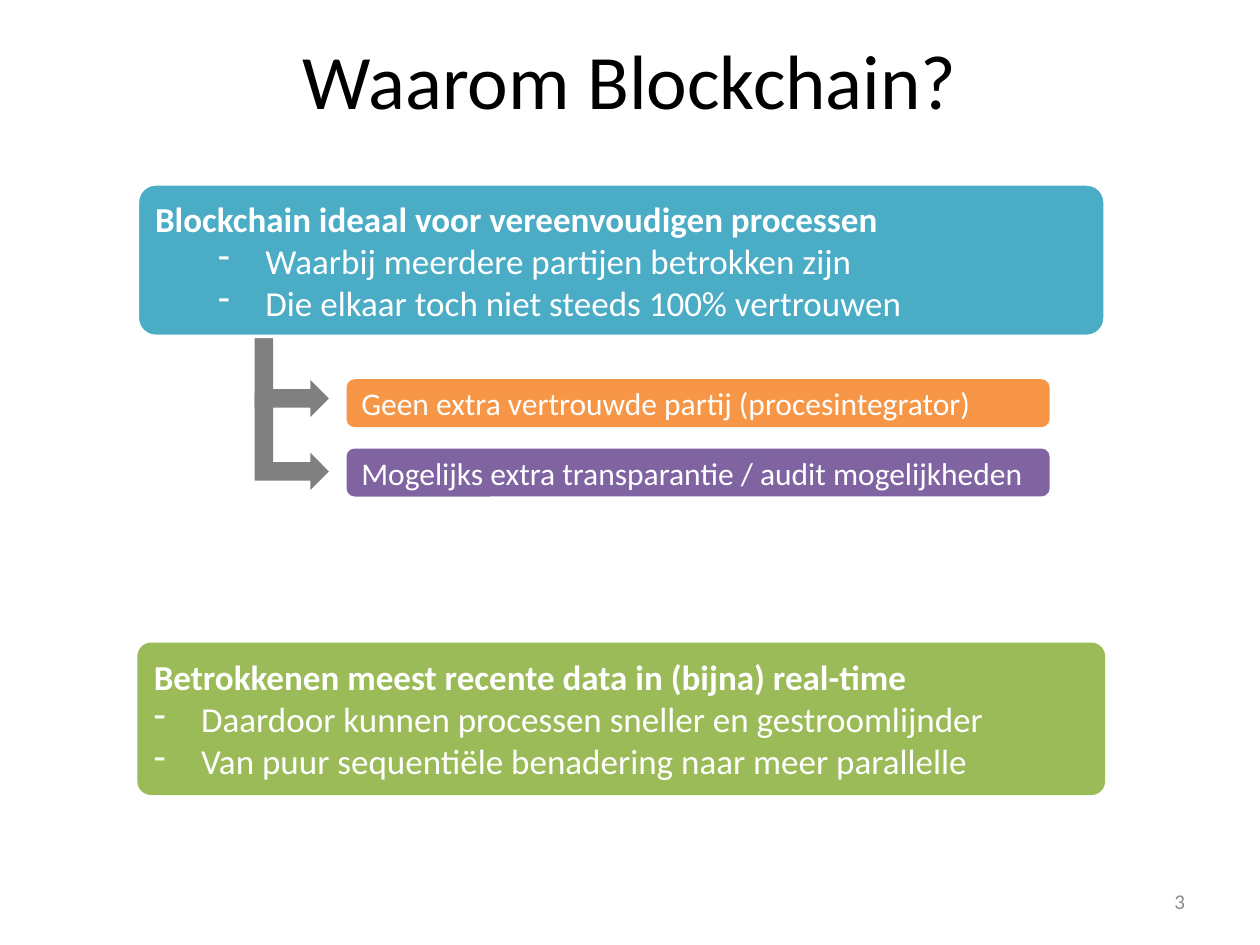
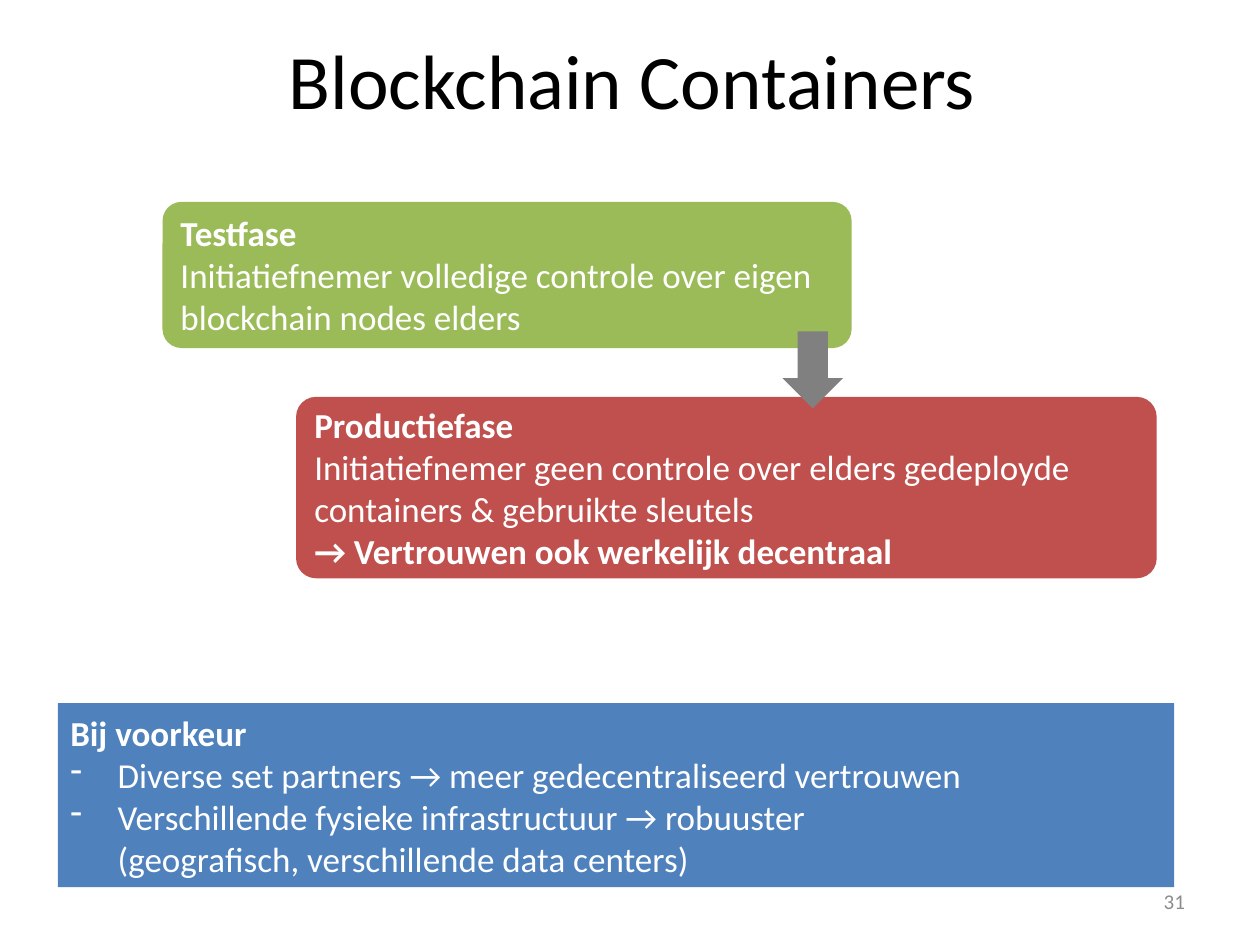
"""Build two slides on why and how to use blockchain."""
from dataclasses import dataclass

from lxml import etree
from pptx import Presentation
from pptx.dml.color import RGBColor
from pptx.enum.shapes import MSO_SHAPE
from pptx.enum.text import MSO_ANCHOR, PP_ALIGN
from pptx.oxml.ns import qn
from pptx.util import Pt

ROUNDED = MSO_SHAPE.ROUNDED_RECTANGLE
RECTANGLE = MSO_SHAPE.RECTANGLE
BENT_ARROW = MSO_SHAPE.BENT_UP_ARROW
DOWN_ARROW = MSO_SHAPE.DOWN_ARROW
MIDDLE = MSO_ANCHOR.MIDDLE
LEFT, CENTER, RIGHT = PP_ALIGN.LEFT, PP_ALIGN.CENTER, PP_ALIGN.RIGHT
TITLE_ONLY = 5


@dataclass(frozen=True)
class Theme:
    """Colours, font and type sizes shared by the slides."""

    font: str = "Calibri"
    black: str = "000000"
    white: str = "FFFFFF"
    number_gray: str = "8C8C8C"
    arrow_gray: str = "808080"
    teal: str = "4BACC6"
    orange: str = "F79646"
    purple: str = "8064A2"
    green: str = "9BBB59"
    red: str = "C0504D"
    blue: str = "4F81BD"
    title_size: int = 44
    box_size: int = 20
    bar_size: int = 18
    number_size: int = 12
    bullet_hang: int = 27


THEME = Theme()


@dataclass(frozen=True)
class Line:
    """A paragraph; a bullet also has a left margin in points."""

    text: str
    bold: bool = False
    bullet_margin: int = 0


def points(*lengths):
    """Turn plain numbers into point lengths."""
    return [Pt(length) for length in lengths]


def format_run(run, size, color, bold=False):
    """Set the font of one run."""
    run.font.name = THEME.font
    run.font.size = Pt(size)
    run.font.bold = bold
    run.font.color.rgb = RGBColor.from_string(color)


def add_bullet(paragraph, margin):
    """Give a paragraph a hanging dash."""
    properties = paragraph._p.get_or_add_pPr()
    properties.set("marL", str(Pt(margin)))
    properties.set("indent", str(-Pt(THEME.bullet_hang)))
    etree.SubElement(properties, qn("a:buFontTx"))
    etree.SubElement(properties, qn("a:buChar")).set("char", "-")


def write_lines(shape, lines, size, color, alignment=LEFT):
    """Fill a shape with formatted paragraphs, centred vertically."""
    frame = shape.text_frame
    frame.word_wrap = True
    frame.vertical_anchor = MIDDLE
    frame.text = "\n".join("" for line in lines)
    for paragraph, line in zip(frame.paragraphs, lines):
        paragraph.text = line.text
        paragraph.alignment = alignment
        if line.bullet_margin:
            add_bullet(paragraph, line.bullet_margin)
        for run in paragraph.runs:
            format_run(run, size, color, line.bold)


def add_titled_slide(presentation, title, number, left=36):
    """Add a slide with its title and slide number."""
    slide = presentation.slides.add_slide(presentation.slide_layouts[TITLE_ONLY])
    heading = slide.shapes.title
    heading.left, heading.top, heading.width, heading.height = points(left, 0, 648, 90)
    write_lines(heading, [Line(title)], THEME.title_size, THEME.black, CENTER)
    number_box = slide.shapes.add_textbox(*points(516.2, 500.5, 168, 28.8))
    write_lines(number_box, [Line(number)], THEME.number_size, THEME.number_gray, RIGHT)
    return slide


def add_filled_shape(slide, kind, bounds, color):
    """Add a flat preset shape without an outline."""
    shape = slide.shapes.add_shape(kind, *points(*bounds))
    shape.shadow.inherit = False
    shape.fill.solid()
    shape.fill.fore_color.rgb = RGBColor.from_string(color)
    shape.line.fill.background()
    return shape


def add_box(slide, bounds, color, lines, rounding=None, size=THEME.box_size):
    """Add a coloured text box, rounded when a rounding is given."""
    kind = RECTANGLE if rounding is None else ROUNDED
    box = add_filled_shape(slide, kind, bounds, color)
    if rounding is not None:
        box.adjustments[0] = rounding
    write_lines(box, lines, size, THEME.white)
    return box


def add_branches(slide, texts_and_colors):
    """Add a stack of bars, each reached by a bent arrow."""
    for index, (text, color) in enumerate(texts_and_colors):
        arrow_bounds = (139, 189.4 + 41.7 * index, 55.4, 42.5)
        arrow = add_filled_shape(slide, BENT_ARROW, arrow_bounds, THEME.arrow_gray)
        arrow.rotation = 90
        bar_bounds = (198, 216.7 + 39.6 * index, 401.8, 27.4)
        add_box(slide, bar_bounds, color, [Line(text)], 0.17, THEME.bar_size)


def build_reasons(presentation):
    """Build the slide with the reasons for blockchain."""
    slide = add_titled_slide(presentation, "Waarom Blockchain?", "3")
    add_branches(slide, [
        ("Geen extra vertrouwde partij (procesintegrator)", THEME.orange),
        ("Mogelijks extra transparantie / audit mogelijkheden", THEME.purple),
    ])
    processes = add_box(slide, (78.5, 105.1, 553, 87.1), THEME.teal, [
        Line("Blockchain ideaal voor vereenvoudigen processen", bold=True),
        Line("Waarbij meerdere partijen betrokken zijn", bullet_margin=63),
        Line("Die elkaar toch niet steeds 100% vertrouwen", bullet_margin=63),
    ], 0.12)
    processes.line.color.rgb = RGBColor.from_string(THEME.white)
    processes.line.width = Pt(2)
    add_box(slide, (78.5, 367.2, 553, 87.1), THEME.green, [
        Line("Betrokkenen meest recente data in (bijna) real-time", bold=True),
        Line("Daardoor kunnen processen sneller en gestroomlijnder", bullet_margin=27),
        Line("Van puur sequentiële benadering naar meer parallelle", bullet_margin=27),
    ], 0.09)


def build_containers(presentation):
    """Build the slide with the test and production phases."""
    slide = add_titled_slide(presentation, "Blockchain Containers", "31", left=37.4)
    add_box(slide, (92.9, 115.4, 393.8, 83.5), THEME.green, [
        Line("Testfase", bold=True),
        Line("Initiatiefnemer volledige controle over eigen blockchain nodes elders"),
    ], 0.13)
    add_box(slide, (169.2, 226.8, 491.8, 103.7), THEME.red, [
        Line("Productiefase", bold=True),
        Line("Initiatiefnemer geen controle over elders gedeployde "
             "containers & gebruikte sleutels"),
        Line("→ Vertrouwen ook werkelijk decentraal", bold=True),
    ], 0.11)
    add_filled_shape(slide, DOWN_ARROW, (447.1, 189.4, 34.6, 43.9), THEME.arrow_gray)
    add_box(slide, (33.1, 401.8, 637.9, 105.1), THEME.blue, [
        Line("Bij voorkeur", bold=True),
        Line("Diverse set partners → meer gedecentraliseerd vertrouwen", bullet_margin=27),
        Line("Verschillende fysieke infrastructuur → robuuster\n"
             "(geografisch, verschillende data centers)", bullet_margin=27),
    ])


def main():
    """Create and save the presentation."""
    presentation = Presentation()
    presentation.slide_width, presentation.slide_height = points(720, 540)
    build_reasons(presentation)
    build_containers(presentation)
    presentation.save("out.pptx")


if __name__ == "__main__":
    main()
